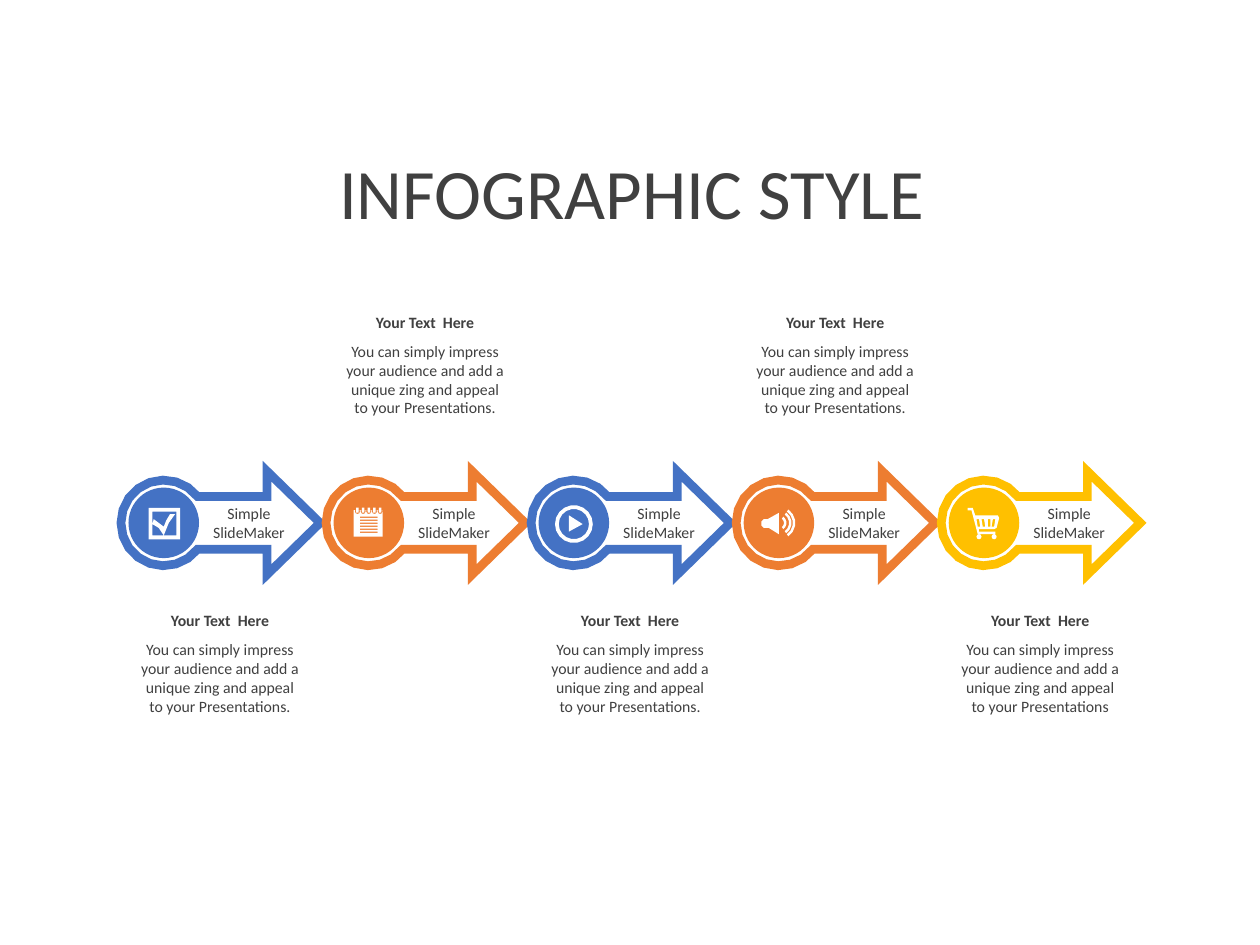
import dataclasses
import math

import lxml.etree
import pptx
import pptx.dml.color
import pptx.enum.shapes
import pptx.enum.text
import pptx.oxml.ns
import pptx.util

Inches = pptx.util.Inches
ANCHOR = pptx.enum.text.MSO_ANCHOR


@dataclasses.dataclass(frozen=True)
class Theme:
    font: str = "Calibri"
    ink: str = "404040"
    white: str = "FFFFFF"
    blue: str = "4472C4"
    orange: str = "ED7D31"
    gold: str = "FFC000"
    title_size: float = 40.5
    text_size: float = 9
    outline: float = 5


THEME = Theme()
FIRST_CENTER, LAST_CENTER, CENTER_Y = 1.3, 7.81, 4.15
ABOVE, BELOW = 2.43, 4.8
LABEL = "Simple SlideMaker"
HEADING = "Your Text  Here"
BODY = "You can simply impress your audience and add a unique zing and appeal to your Presentations"


def rgb(value):
    return pptx.dml.color.RGBColor.from_string(value)


def apply_format(target, values):
    for name, value in values.items():
        setattr(target, name, value)


def arc(x, y, radius, start, end, steps):
    angles = [math.radians(start + (end - start) * i / steps) for i in range(steps + 1)]
    return [(x + radius * math.cos(a), y + radius * math.sin(a)) for a in angles]


def circle(x, y, radius, steps):
    return arc(x, y, radius, 0, 360, steps)[:-1]


def box(x, y, width, height):
    return [(x, y), (x + width, y), (x + width, y + height), (x, y + height)]


def arrow_outline():
    return [[(0.82, -0.41), (1.24, 0), (0.82, 0.41), (0.82, 0.21)]
            + arc(0, 0, 0.34, 38, 322, 16) + [(0.82, -0.21)]]


def checkbox_icon():
    tick = [(-0.09, 0.01), (-0.08, -0.03), (0, 0.03), (0.02, -0.02), (0.05, -0.07),
            (0.09, -0.07), (0.04, 0), (0, 0.1), (-0.04, 0.04)]
    return [box(-0.12, -0.12, 0.25, 0.25), box(-0.09, -0.09, 0.19, 0.19), tick]


def notepad_icon():
    contours = [box(-0.12, -0.1, 0.23, 0.21)]
    contours += [box(-0.07, -0.05 + 0.12 * i / 5, 0.14, 0.01) for i in range(6)]
    for i in range(5):
        x = -0.09 + 0.18 * i / 4
        contours.append([(x + 0.02, -0.1)] + arc(x, -0.09, 0.02, 0, 180, 4) + [(x - 0.02, -0.1)])
        contours.append(box(x - 0.01, -0.12, 0.02, 0.04))
    return contours


def play_icon():
    triangle = [(-0.04, -0.06), (0.07, 0.01), (-0.04, 0.07)]
    return [circle(0, 0.01, 0.15, 18), circle(0, 0.01, 0.12, 18), triangle]


def speaker_icon():
    horn = [(0, -0.08), (0, 0.09), (-0.08, 0.04), (-0.12, 0.04), (-0.14, 0.02),
            (-0.14, -0.01), (-0.12, -0.03), (-0.09, -0.03)]
    waves = [arc(0, 0, radius, -55, 55, 5) + arc(0, 0, radius - 0.02, 55, -55, 5)
             for radius in (0.06, 0.1, 0.13)]
    return [horn] + waves


def cart_icon():
    frame = [(-0.09, -0.12), (-0.07, -0.06), (0.11, -0.06), (0.12, -0.04), (0.1, 0.04),
             (0.08, 0.05), (-0.04, 0.05), (-0.04, 0.07), (0.09, 0.07), (0.09, 0.09),
             (-0.05, 0.09), (-0.1, -0.1), (-0.13, -0.1), (-0.13, -0.12)]
    slots = [[(top, -0.03), (bottom, 0.03), (bottom + 0.02, 0.03), (top + 0.02, -0.03)]
             for top, bottom in ((-0.06, -0.05), (-0.02, -0.01), (0.03, 0.03), (0.07, 0.06))]
    return [frame] + slots + [circle(x, 0.11, 0.02, 8) for x in (-0.04, 0.08)]


def paint(shape, fill, line=None):
    shape.shadow.inherit = False
    shape.fill.solid()
    shape.fill.fore_color.rgb = rgb(fill)
    if line is None:
        shape.line.fill.background()
        return
    shape.line.color.rgb = rgb(line)
    shape.line.width = pptx.util.Pt(THEME.outline)
    outline = shape.line.fill._xPr
    miter = lxml.etree.SubElement(outline, pptx.oxml.ns.qn("a:miter"))
    miter.set("lim", "800000")


def add_outline(slide, center_x, contours, fill, line=None):
    placed = [[(Inches(center_x + x), Inches(CENTER_Y + y)) for x, y in contour]
              for contour in contours]
    builder = slide.shapes.build_freeform(*placed[0][0])
    for index, contour in enumerate(placed):
        if index:
            builder.move_to(*contour[0])
        builder.add_line_segments(contour[1:], close=True)
    paint(builder.convert_to_shape(), fill, line)


def add_disc(slide, center_x, color):
    radius = 0.28
    shape = slide.shapes.add_shape(
        pptx.enum.shapes.MSO_SHAPE.OVAL, Inches(center_x - radius),
        Inches(CENTER_Y - radius), Inches(2 * radius), Inches(2 * radius))
    paint(shape, color)


def add_text(slide, text, bounds, size=THEME.text_size, bold=False, anchor=ANCHOR.TOP):
    shape = slide.shapes.add_textbox(*map(Inches, bounds))
    apply_format(shape.text_frame, {"word_wrap": True, "vertical_anchor": anchor})
    paragraph = shape.text_frame.paragraphs[0]
    paragraph.alignment = pptx.enum.text.PP_ALIGN.CENTER
    run = paragraph.add_run()
    run.text = text
    apply_format(run.font, {"name": THEME.font, "size": pptx.util.Pt(size), "bold": bold})
    run.font.color.rgb = rgb(THEME.ink)


def add_step(slide, center_x, color, icon, caption_top, body):
    add_outline(slide, center_x, arrow_outline(), THEME.white, color)
    add_disc(slide, center_x, color)
    add_outline(slide, center_x, icon, THEME.white)
    add_text(slide, LABEL, (center_x + 0.28, 3.95, 0.79, 0.4), anchor=ANCHOR.MIDDLE)
    caption_left = center_x - 0.3
    add_text(slide, HEADING, (caption_left, caption_top, 1.49, 0.25), bold=True)
    add_text(slide, body, (caption_left, caption_top + 0.23, 1.49, 0.71))


def main():
    presentation = pptx.Presentation()
    apply_format(presentation, {"slide_width": Inches(10), "slide_height": Inches(7.5)})
    slide = presentation.slides.add_slide(presentation.slide_layouts[6])
    add_text(slide, "INFOGRAPHIC STYLE", (0.27, 1.22, 9.49, 0.59),
             size=THEME.title_size, anchor=ANCHOR.MIDDLE)
    steps = [
        (THEME.blue, checkbox_icon(), BELOW, BODY + "."),
        (THEME.orange, notepad_icon(), ABOVE, BODY + "."),
        (THEME.blue, play_icon(), BELOW, BODY + "."),
        (THEME.orange, speaker_icon(), ABOVE, BODY + "."),
        (THEME.gold, cart_icon(), BELOW, BODY),
    ]
    pitch = (LAST_CENTER - FIRST_CENTER) / (len(steps) - 1)
    for index, step in enumerate(steps):
        add_step(slide, FIRST_CENTER + index * pitch, *step)
    presentation.save("out.pptx")


if __name__ == "__main__":
    main()
